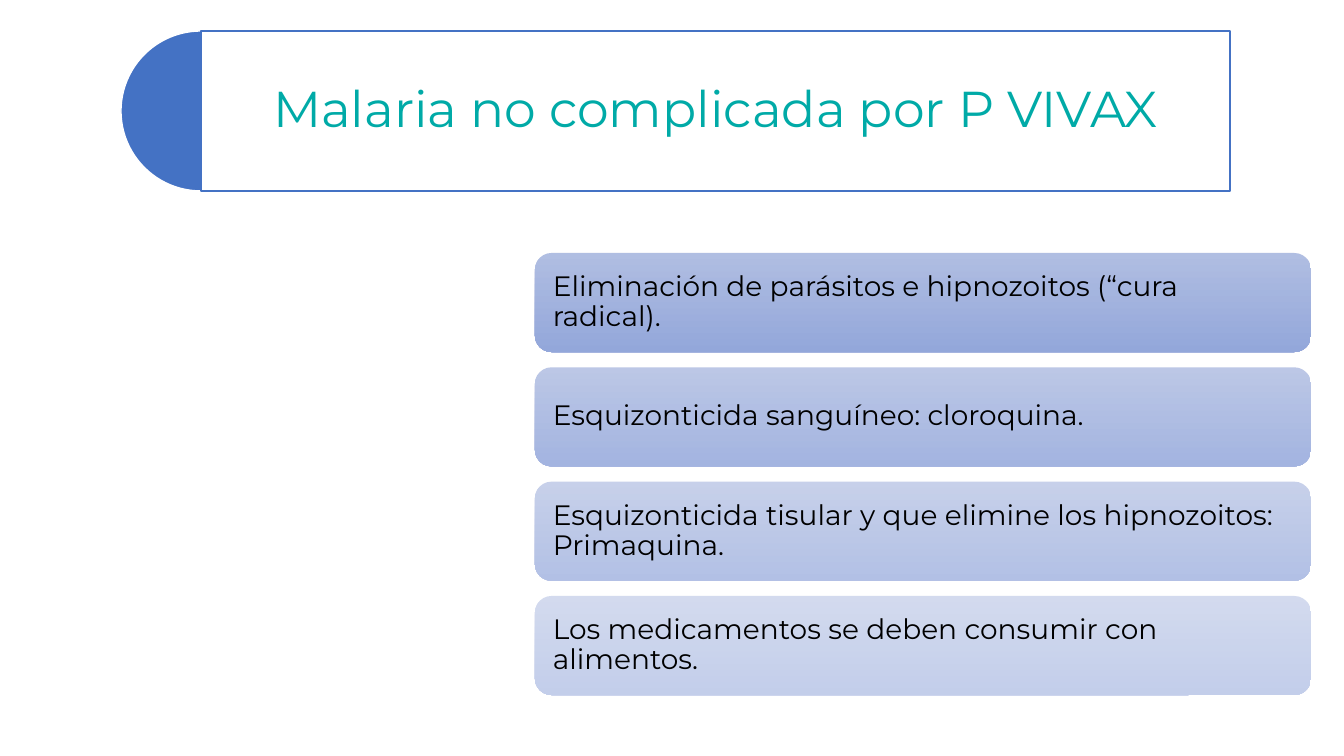
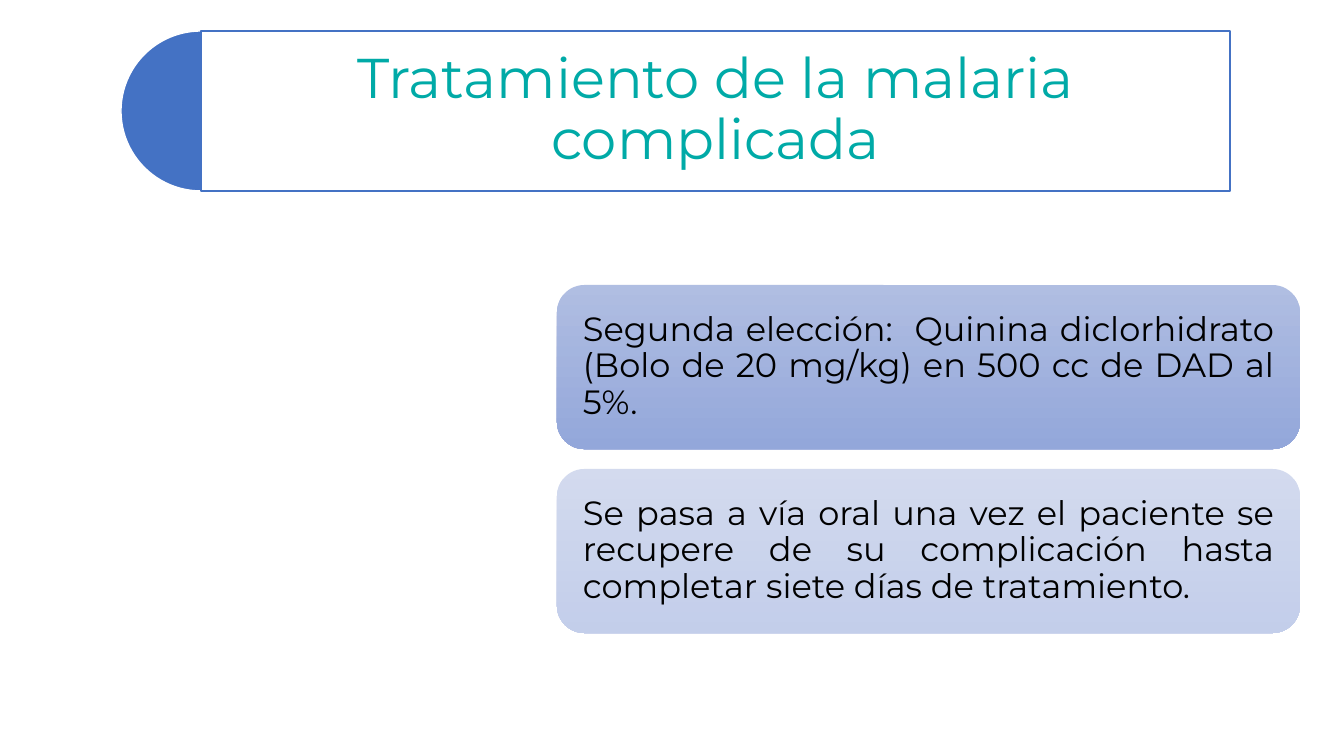
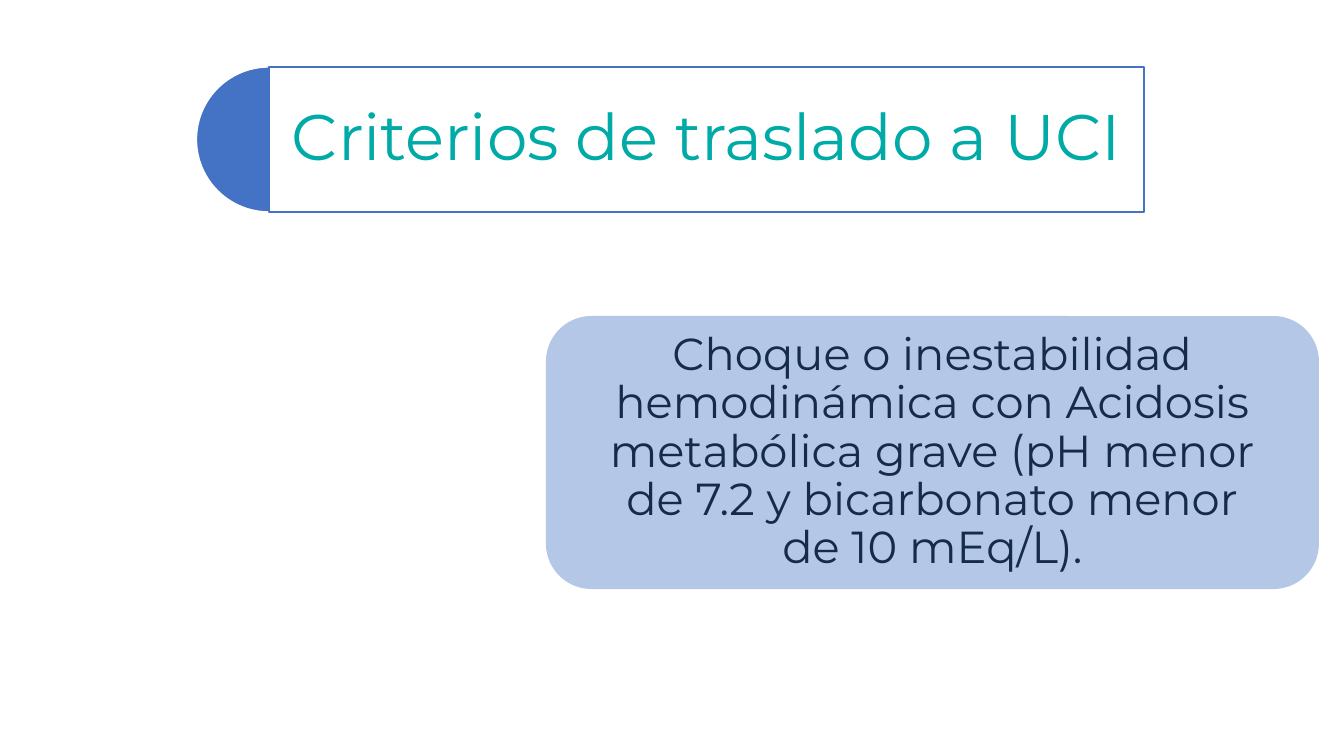
from pptx import Presentation
from pptx.dml.color import RGBColor
from pptx.enum.shapes import MSO_SHAPE
from pptx.enum.text import MSO_ANCHOR, MSO_AUTO_SIZE, PP_ALIGN
from pptx.oxml.ns import qn
from pptx.util import Emu, Pt
from lxml import etree

PIE, ROUNDED = MSO_SHAPE.PIE, MSO_SHAPE.ROUNDED_RECTANGLE
LEFT, CENTER, JUSTIFY = PP_ALIGN.LEFT, PP_ALIGN.CENTER, PP_ALIGN.JUSTIFY

PX = 914400 / 100.8
FONT = "Montserrat"
BLUE, TEAL, WHITE, BLACK = "4472C4", "00AAA7", "FFFFFF", "000000"
PALE_BLUE, NAVY = "B4C7E7", "152B48"
GRADIENT = ("A8B7DF", "889ED7")
ALPHA_FIRST, ALPHA_LAST = 90, 50  # opacity of the top and bottom cards


def rgb(value):
    return RGBColor.from_string(value)


def write(shape, text, size, color, align, inset):
    """Fill a shape with one vertically centred paragraph."""
    tf = shape.text_frame
    tf.word_wrap = True
    tf.auto_size = MSO_AUTO_SIZE.NONE
    tf.vertical_anchor = MSO_ANCHOR.MIDDLE
    tf.margin_left = tf.margin_right = Emu(round(inset * PX))
    tf.margin_top = tf.margin_bottom = 0
    p = tf.paragraphs[0]
    p.alignment = align
    p.line_spacing = 0.9
    r = p.add_run()
    r.text = text
    r.font.name = FONT
    r.font.size = Pt(size)
    r.font.color.rgb = rgb(color)


# Header: left, top, width, height of the title frame; size and inset of its text
# Cards: left, top, width, height of one card and bottom of the stack
slides = [
    dict(title="Malaria no complicada por P VIVAX",
         frame=(201, 31, 1029, 160), title_size=36, title_inset=15,
         card=(535, 253, 776, 99), bottom=695, size=20, inset=13,
         align=LEFT, color=BLACK, fill=None,
         texts=["Eliminación de parásitos e hipnozoitos (“cura radical).",
                "Esquizonticida sanguíneo: cloroquina.",
                "Esquizonticida tisular y que elimine los hipnozoitos: Primaquina.",
                "Los medicamentos se deben consumir con alimentos."]),
    dict(title="Tratamiento de la malaria complicada",
         frame=(201, 31, 1029, 160), title_size=40, title_inset=17,
         card=(557, 285, 743, 164), bottom=633, size=24, inset=18,
         align=JUSTIFY, color=BLACK, fill=None,
         texts=["Segunda elección:  Quinina diclorhidrato (Bolo de 20 mg/kg) "
                "en 500 cc de DAD al 5%.",
                "Se pasa a vía oral una vez el paciente se recupere de su "
                "complicación hasta completar siete días de tratamiento."]),
    dict(title="Criterios de traslado a UCI",
         frame=(269, 67, 875, 145), title_size=46, title_inset=19,
         card=(546, 316, 773, 273), bottom=589, size=32, inset=34,
         align=CENTER, color=NAVY, fill=PALE_BLUE,
         texts=["Choque o inestabilidad hemodinámica con Acidosis metabólica "
                "grave (pH menor de 7.2 y bicarbonato menor de 10 mEq/L)."]),
]

prs = Presentation()
prs.slide_width, prs.slide_height = round(1344 * PX), round(756 * PX)

for d in slides:
    s = prs.slides.add_slide(prs.slide_layouts[5])

    # Title frame
    left, top, width, height = [round(v * PX) for v in d["frame"]]
    title = s.shapes.title
    title.left, title.top, title.width, title.height = left, top, width, height
    title.fill.solid()
    title.fill.fore_color.rgb = rgb(WHITE)
    title.line.color.rgb = rgb(BLUE)
    title.line.width = Pt(1)
    write(title, d["title"], d["title_size"], TEAL, CENTER, d["title_inset"])

    # Half disc behind the left edge of the frame
    disc = s.shapes.add_shape(PIE, left - height // 2, top, height, height)
    disc.adjustments[0], disc.adjustments[1] = 54, 162
    disc.shadow.inherit = False
    disc.fill.solid()
    disc.fill.fore_color.rgb = rgb(BLUE)
    disc.line.color.rgb = rgb(WHITE)
    disc.line.width = Pt(1)
    title.element.addprevious(disc.element)

    # Stack of cards, evenly spaced and fading downwards
    x, y, w, h = d["card"]
    steps = max(len(d["texts"]) - 1, 1)
    pitch = (d["bottom"] - h - y) / steps
    for i, text in enumerate(d["texts"]):
        card = s.shapes.add_shape(ROUNDED, round(x * PX), round((y + i * pitch) * PX),
                                  round(w * PX), round(h * PX))
        card.shadow.inherit = False
        card.line.fill.background()
        if d["fill"]:
            card.fill.solid()
            card.fill.fore_color.rgb = rgb(d["fill"])
        else:
            card.fill.gradient()
            card.fill.gradient_angle = 270
            for stop, color in zip(card.fill.gradient_stops, GRADIENT):
                stop.color.rgb = rgb(color)
            alpha = ALPHA_FIRST + (ALPHA_LAST - ALPHA_FIRST) * i / steps
            for c in card.element.spPr.iter(qn("a:srgbClr")):
                etree.SubElement(c, qn("a:alpha")).set("val", str(round(alpha * 1000)))
        write(card, text, d["size"], d["color"], d["align"], d["inset"])

prs.save("out.pptx")
